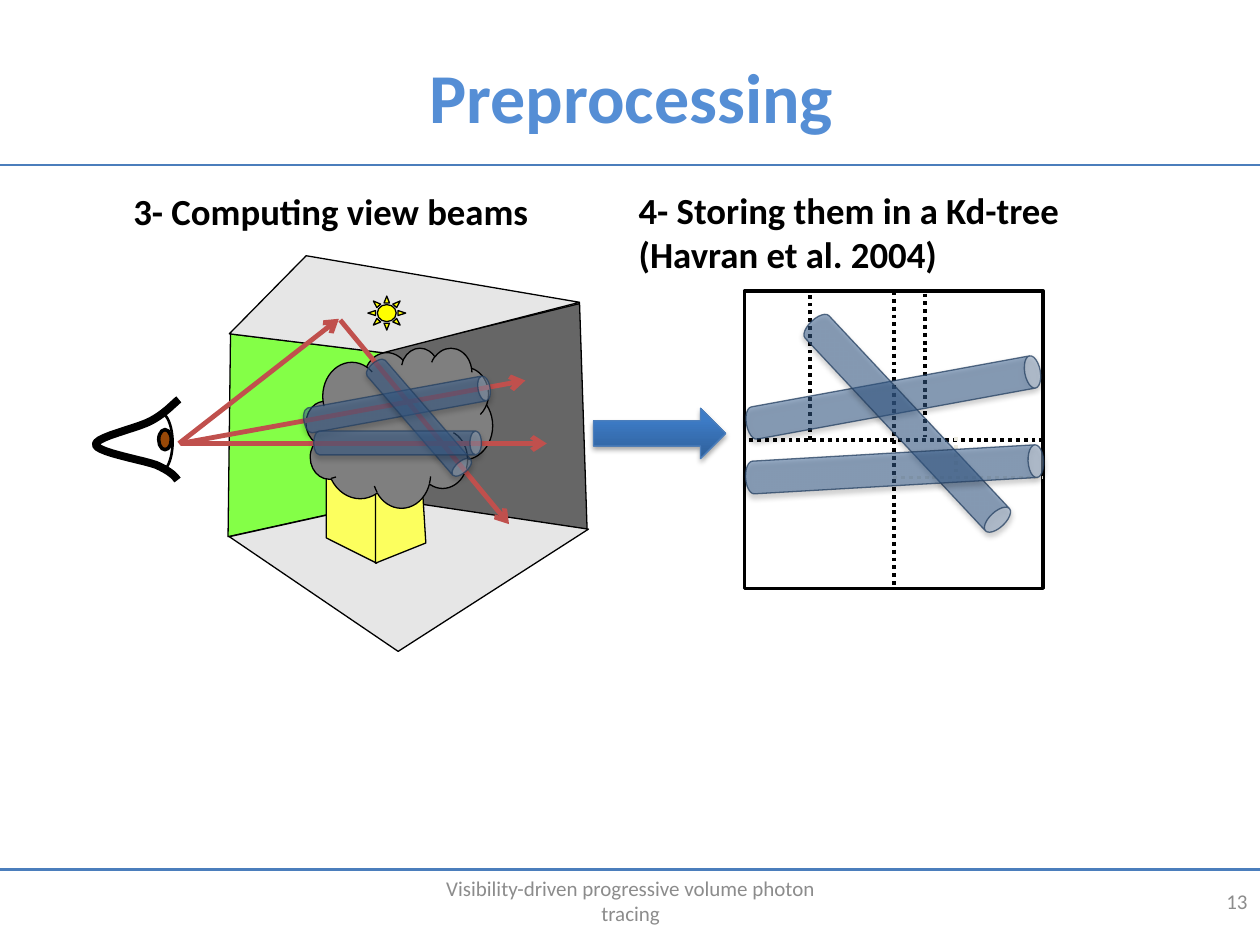
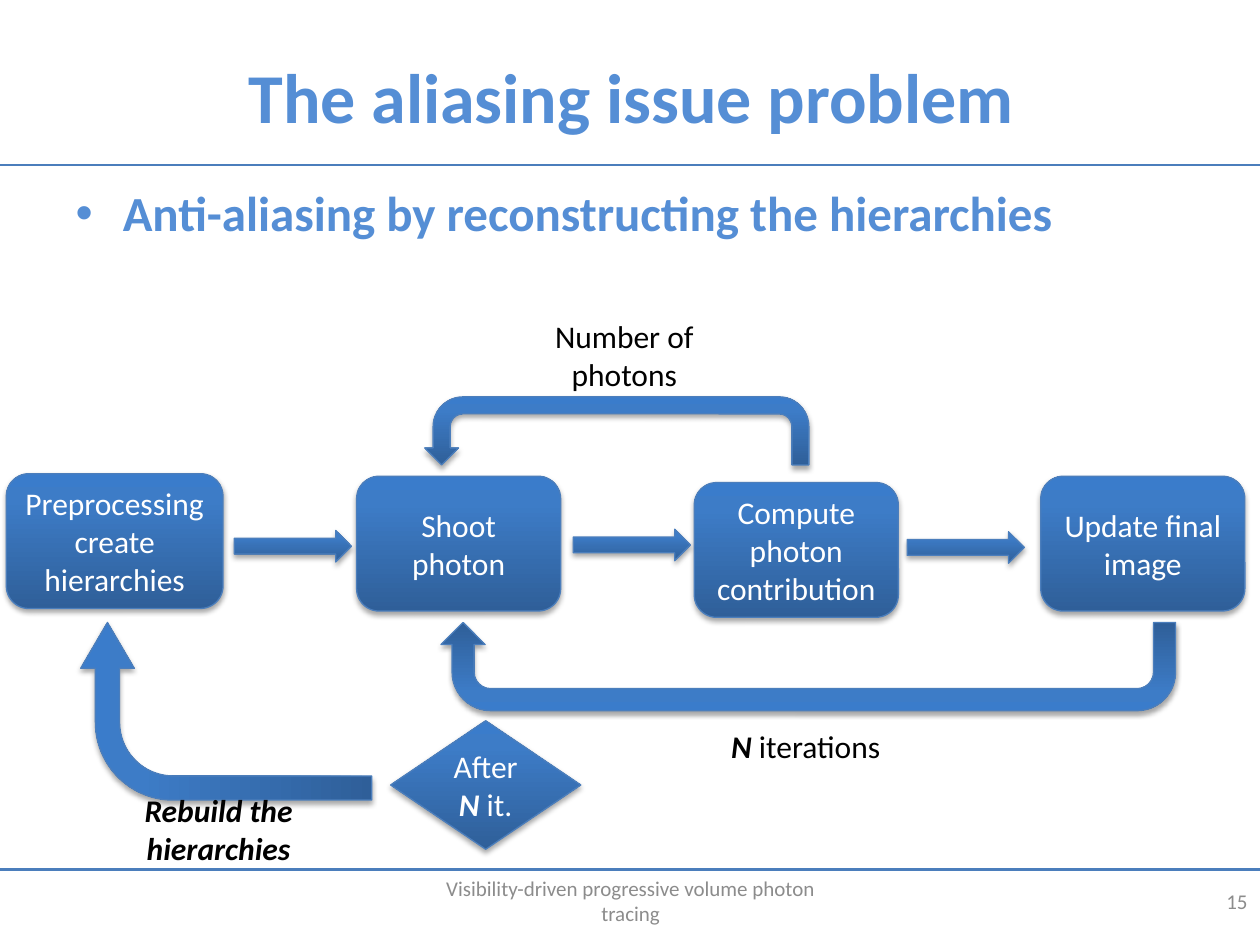
from lxml import etree
from pptx import Presentation
from pptx.dml.color import RGBColor
from pptx.enum.dml import MSO_LINE
from pptx.enum.shapes import MSO_CONNECTOR, MSO_SHAPE
from pptx.enum.text import MSO_ANCHOR, PP_ALIGN
from pptx.oxml.ns import qn
from pptx.util import Inches, Pt

STRAIGHT = MSO_CONNECTOR.STRAIGHT
DOTTED = MSO_LINE.ROUND_DOT
LEFT, CENTER, RIGHT = PP_ALIGN.LEFT, PP_ALIGN.CENTER, PP_ALIGN.RIGHT
MIDDLE, TOP = MSO_ANCHOR.MIDDLE, MSO_ANCHOR.TOP
FONT = "Calibri"
FOOTER = "Visibility-driven progressive volume photon tracing"
COLORS = {
    "heading": "558ED5", "rule": "4B7EBC", "footer": "8C8C8C",
    "black": "000000", "white": "FFFFFF", "ray": "C0504D",
    "dark wall": "666666", "green wall": "84FF47", "floor": "E6E6E6",
    "box": "FCFF5E", "sun": "FFFF00", "cloud": "7F7F7F",
    "beam": "376092", "beam edge": "254061", "faint": "EEECE1", "iris": "984807",
}
BLUE_GRADIENT = ((0, "2F5F99"), (80, "3D7CC7"), (100, "3A7CCB"))
UTURN = (0.25, 0.25, 0.25, 0.438, 1)
BENT = (0.136, 0.151, 0.258, 0.438)


def rgb(name):
    return RGBColor.from_string(COLORS[name])


def inches(values):
    return [Inches(value) for value in values]


def add_xml(parent, tag, **attributes):
    child = etree.SubElement(parent, qn(tag))
    for name, value in attributes.items():
        child.set(name, str(value))
    return child


def format_font(font, size, color, bold=None, italic=None):
    font.name, font.size, font.bold, font.italic = FONT, Pt(size), bold, italic
    font.color.rgb = rgb(color)


def write(text_frame, paragraphs, size, color, align=CENTER, anchor=TOP,
          bold=None, italic=None):
    """Fill a frame; a paragraph is a string or a list of (text, emphasised) runs."""
    text_frame.word_wrap = True
    text_frame.vertical_anchor = anchor
    for index, content in enumerate(paragraphs):
        paragraph = text_frame.paragraphs[0] if index == 0 else text_frame.add_paragraph()
        paragraph.alignment = align
        runs = [(content, False)] if isinstance(content, str) else content
        for text, emphasised in runs:
            run = paragraph.add_run()
            run.text = text
            if emphasised:
                run.font.bold = run.font.italic = True
        format_font(paragraph.font, size, color, bold, italic)


def add_text(slide, bounds, paragraphs, size, color="black", **options):
    box = slide.shapes.add_textbox(*inches(bounds))
    write(box.text_frame, paragraphs, size, color, **options)


def add_line(slide, start, end, color, width, dash=None, arrow=False):
    line = slide.shapes.add_connector(STRAIGHT, *inches(start + end))
    line.line.color.rgb = rgb(color)
    line.line.width = Pt(width)
    if dash:
        line.line.dash_style = dash
    if arrow:
        add_xml(line.line._get_or_add_ln(), "a:tailEnd", type="arrow")
    add_xml(line._element.spPr, "a:effectLst")
    return line


def paint(shape, fill, line, width):
    if fill:
        shape.fill.solid()
        shape.fill.fore_color.rgb = rgb(fill)
    else:
        shape.fill.background()
    shape.line.color.rgb = rgb(line)
    shape.line.width = Pt(width)
    shape.shadow.inherit = False


def add_preset(slide, kind, bounds, fill, line="black", width=0, rotation=0, adjustments=()):
    shape = slide.shapes.add_shape(kind, *inches(bounds))
    shape.rotation = rotation
    for index, value in enumerate(adjustments):
        shape.adjustments[index] = value
    paint(shape, fill, line, width)
    return shape


def add_outline(slide, points, fill=None, width=0, close=True):
    points = [tuple(inches(point)) for point in points]
    builder = slide.shapes.build_freeform(*points[0])
    builder.add_line_segments(points[1:], close=close)
    paint(builder.convert_to_shape(), fill, "black", width)


def add_soft_shadow(shape):
    effects = shape._element.spPr.find(qn("a:effectLst"))
    shadow = add_xml(effects, "a:outerShdw", blurRad=Pt(3.1), dist=Pt(1.8),
                     dir=5400000, rotWithShape=0)
    add_xml(add_xml(shadow, "a:srgbClr", val=COLORS["black"]), "a:alpha", val=35000)


def add_blue_shape(slide, kind, bounds, paragraphs=(), flip=False, **options):
    """Add a flow shape with the blue gradient, a soft shadow and white text."""
    shape = add_preset(slide, kind, bounds, "rule", "rule", 0.75, **options)
    properties = shape._element.spPr
    solid = properties.find(qn("a:solidFill"))
    gradient = etree.Element(qn("a:gradFill"), rotWithShape="1")
    stops = add_xml(gradient, "a:gsLst")
    for position, color in BLUE_GRADIENT:
        add_xml(add_xml(stops, "a:gs", pos=position * 1000), "a:srgbClr", val=color)
    add_xml(gradient, "a:lin", ang=16200000, scaled=0)
    properties.replace(solid, gradient)
    if flip:
        properties.find(qn("a:xfrm")).set("flipH", "1")
    add_soft_shadow(shape)
    if paragraphs:
        write(shape.text_frame, paragraphs, 18, "white", anchor=MIDDLE)


def add_beam(slide, bounds, rotation):
    beam = add_preset(slide, MSO_SHAPE.CAN, bounds, "beam", "beam edge", 0.75,
                      rotation, (0.476,))
    properties = beam._element.spPr
    for path, alpha in (("a:solidFill", 50000), ("a:ln/a:solidFill", 75000)):
        parts = [qn(part) for part in path.split("/")]
        color = properties.find("/".join(parts + [qn("a:srgbClr")]))
        add_xml(color, "a:alpha", val=alpha)
    add_soft_shadow(beam)


def bezier(start, *segments, steps=10):
    """Return points along a chain of cubic curves."""
    points = [start]
    for first, second, end in segments:
        origin = points[-1]
        for step in range(1, steps + 1):
            t = step / steps
            weights = ((1 - t) ** 3, 3 * t * (1 - t) ** 2, 3 * t * t * (1 - t), t ** 3)
            corners = (origin, first, second, end)
            points.append(tuple(sum(weight * corner[axis]
                                    for weight, corner in zip(weights, corners))
                                for axis in (0, 1)))
    return points


def add_base_slide(presentation, layout, title, number):
    slide = presentation.slides.add_slide(presentation.slide_layouts[layout])
    for height in (6.9, 1.31):
        add_line(slide, (0, height), (10, height), "rule", 1.5)
    heading = slide.shapes.title
    heading.left, heading.top, heading.width, heading.height = inches((0.51, 0.13, 9, 1.25))
    write(heading.text_frame, [title], 40, "heading", anchor=MIDDLE, bold=True)
    add_text(slide, (3.42, 6.95, 3.17, 0.4), [FOOTER], 12, "footer", anchor=MIDDLE)
    add_text(slide, (7.67, 6.95, 2.33, 0.4), [str(number)], 12, "footer",
             align=RIGHT, anchor=MIDDLE)
    return slide


def draw_room(slide):
    surfaces = (
        ("dark wall", [(3.05, 2.79), (4.6, 2.41), (4.66, 4.2), (3.11, 3.97)]),
        ("green wall", [(1.83, 2.65), (1.81, 4.26), (3.12, 3.97), (3.05, 2.8)]),
        ("floor", [(1.82, 4.26), (3.16, 5.17), (4.67, 4.2), (3.13, 3.97)]),
        ("floor", [(1.82, 2.65), (3.04, 2.8), (4.6, 2.4), (2.43, 2.03)]),
        ("box", [(2.59, 4.27), (2.99, 4.47), (2.98, 3.6), (2.59, 3.67)]),
        ("box", [(2.98, 4.47), (3.38, 4.31), (3.34, 3.66), (2.98, 3.6)]),
    )
    for color, corners in surfaces:
        add_outline(slide, corners, color)
    add_preset(slide, MSO_SHAPE.SUN, (2.92, 2.35, 0.3, 0.27), "sun")
    add_preset(slide, MSO_SHAPE.CLOUD, (2.43, 2.76, 1.48, 1.27), "cloud")


def draw_tree_splits(slide, volume):
    vertical = add_line(slide, (7.09, 2.31), (7.09, 4.67), "black", 2.25, DOTTED)
    vertical.begin_connect(volume, 0)
    vertical.end_connect(volume, 2)
    horizontal = add_line(slide, (8.28, 3.49), (5.91, 3.49), "black", 2.25, DOTTED)
    horizontal.begin_connect(volume, 3)
    horizontal.end_connect(volume, 1)
    for start, end, color in (
        ((6.43, 3.49), (6.43, 2.31), "black"),
        ((7.34, 2.33), (7.34, 3.47), "black"),
        ((7.09, 3.79), (8.28, 3.79), "faint"),
        ((7.59, 3.47), (7.59, 3.78), "faint"),
    ):
        add_line(slide, start, end, color, 2.25, DOTTED)


def draw_eye(slide):
    add_preset(slide, MSO_SHAPE.ARC, (1.16, 3.27, 0.21, 0.48), None, width=1.5,
               adjustments=(162, 47.771))
    eyelids = bezier((1.42, 3.17),
                     ((1.36, 3.22), (1.31, 3.28), (1.2, 3.34)),
                     ((1.09, 3.4), (0.75, 3.47), (0.76, 3.53)),
                     ((0.77, 3.59), (1.13, 3.65), (1.24, 3.69)),
                     ((1.35, 3.74), (1.38, 3.77), (1.41, 3.81)))
    add_outline(slide, eyelids, width=4.5, close=False)
    add_preset(slide, MSO_SHAPE.OVAL, (1.26, 3.41, 0.1, 0.16), "iris", width=2)


def build_preprocessing(presentation):
    slide = add_base_slide(presentation, 5, "Preprocessing", 13)
    volume = add_preset(slide, MSO_SHAPE.RECTANGLE, (5.91, 2.31, 2.37, 2.36), "white", width=2)
    draw_room(slide)
    add_text(slide, (0.96, 1.45, 3.92, 0.45), ["3- Computing view beams"], 21,
             align=LEFT, bold=True)
    add_text(slide, (4.97, 1.44, 4.12, 0.81),
             ["4- Storing them in a Kd-tree", "(Havran et al. 2004)"], 21,
             align=LEFT, bold=True)
    for start, end in (((1.42, 3.52), (2.69, 2.53)), ((2.7, 2.54), (4.04, 4.16)),
                       ((1.43, 3.52), (4.17, 3.02)), ((1.44, 3.52), (4.34, 3.52))):
        add_line(slide, start, end, "ray", 2.75, arrow=True)
    add_blue_shape(slide, MSO_SHAPE.RIGHT_ARROW, (4.71, 3.24, 1.05, 0.4))
    draw_tree_splits(slide, volume)
    for bounds, rotation in (
        ((3.05, 2.46, 0.2, 1.5), 79.6),
        ((3.23, 2.75, 0.19, 1.13), 139.2),
        ((3.06, 2.85, 0.19, 1.33), 90),
        ((6.96, 1.97, 0.26, 2.37), 79.6),
        ((7.07, 2.25, 0.26, 2.22), 136.9),
        ((6.97, 2.54, 0.26, 2.37), 86.7),
    ):
        add_beam(slide, bounds, rotation)
    draw_eye(slide)


def build_aliasing(presentation):
    slide = add_base_slide(presentation, 1, "The aliasing issue problem", 15)
    body = slide.placeholders[1]
    body.left, body.top, body.width, body.height = inches((0.5, 1.4, 9, 4.95))
    write(body.text_frame, ["Anti-aliasing by reconstructing the hierarchies"], 28,
          "heading", align=LEFT, bold=True)
    body.text_frame.paragraphs[0].space_before = Pt(0)

    for left, top, width, paragraphs in (
        (5.51, 3.83, 1.62, ["Compute photon contribution"]),
        (2.83, 3.78, 1.62, ["Shoot photon"]),
        (8.26, 3.78, 1.62, ["Update final image"]),
        (0.05, 3.76, 1.72, ["Preprocessing", "create hierarchies"]),
    ):
        add_blue_shape(slide, MSO_SHAPE.ROUNDED_RECTANGLE, (left, top, width, 1.07), paragraphs)
    for left, top in ((1.86, 4.21), (4.55, 4.2), (7.2, 4.22)):
        add_blue_shape(slide, MSO_SHAPE.RIGHT_ARROW, (left, top, 0.93, 0.25))
    add_blue_shape(slide, MSO_SHAPE.U_TURN_ARROW, (3.37, 3.15, 3.05, 0.54), flip=True,
                   adjustments=UTURN)
    add_blue_shape(slide, MSO_SHAPE.U_TURN_ARROW, (3.5, 4.94, 5.83, 0.7), rotation=180,
                   adjustments=UTURN)
    add_blue_shape(slide, MSO_SHAPE.BENT_ARROW, (1.09, 4.49, 1.41, 2.31), rotation=270,
                   adjustments=BENT)
    add_blue_shape(slide, MSO_SHAPE.FLOWCHART_DECISION, (3.1, 5.72, 1.51, 1.02),
                   [[("After ", False), ("N ", True), ("it.", False)]])

    add_text(slide, (4.12, 2.47, 1.67, 0.71), ["Number of photons"], 18)
    add_text(slide, (5.16, 5.72, 2.47, 0.4), [[("N ", True), ("iterations", False)]], 18)
    add_text(slide, (0.5, 6.23, 2.47, 0.71), ["Rebuild the hierarchies"], 18,
             bold=True, italic=True)


def main():
    presentation = Presentation()
    presentation.slide_width, presentation.slide_height = inches((10, 7.5))
    build_preprocessing(presentation)
    build_aliasing(presentation)
    presentation.save("out.pptx")


if __name__ == "__main__":
    main()
